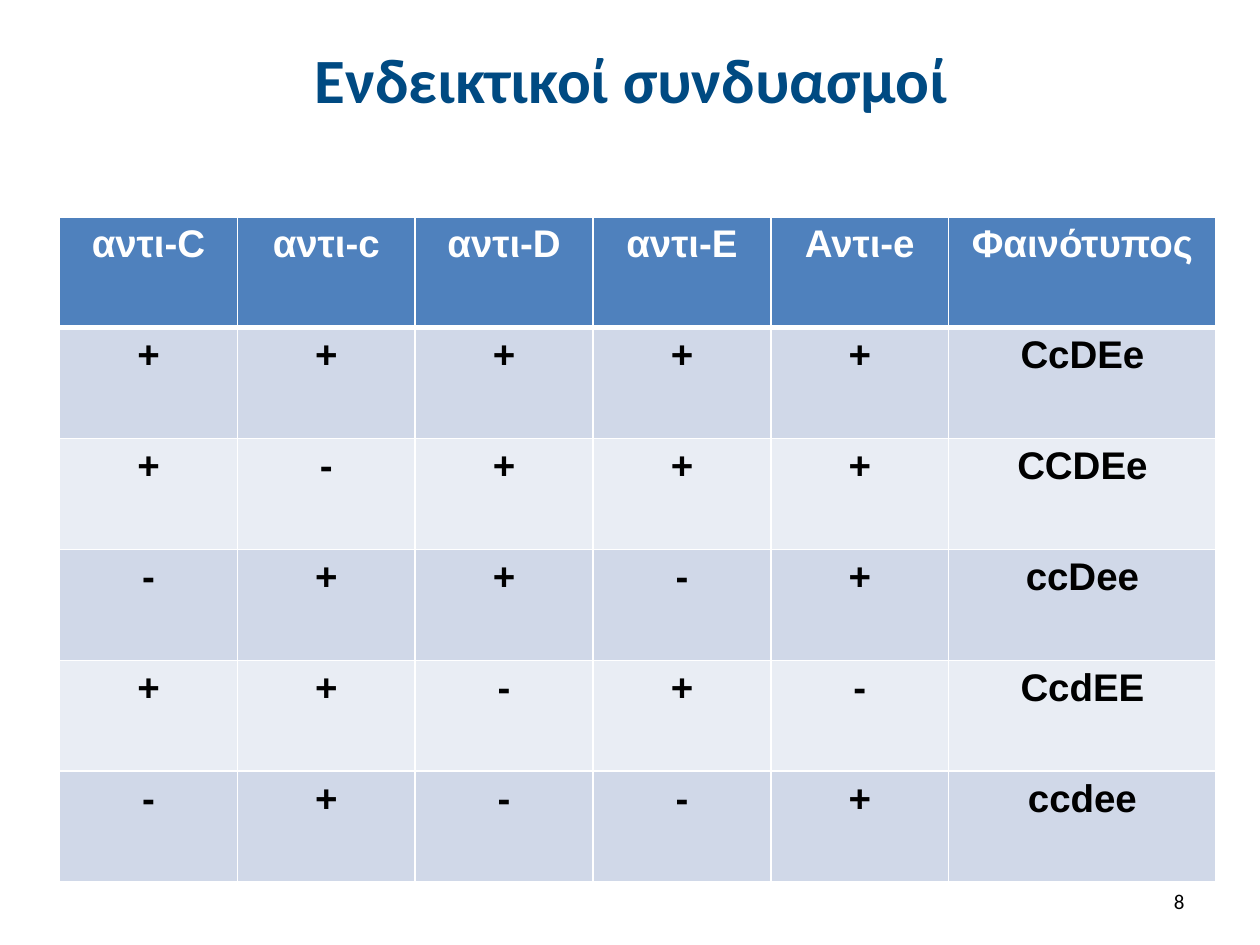
from lxml import etree
from pptx import Presentation
from pptx.dml.color import RGBColor
from pptx.enum import text
from pptx.oxml import ns
from pptx.util import Cm, Pt

HEADERS = ["αντι-C", "αντι-c", "αντι-D", "αντι-E", "Αντι-e", "Φαινότυπος"]
REACTIONS = [
    ("+++++", "CcDEe"),
    ("+-+++", "CCDEe"),
    ("-++-+", "ccDee"),
    ("++-+-", "CcdEE"),
    ("-+--+", "ccdee"),
]
HEADER_FILL = "4F81BD"
BAND_FILLS = ["D0D8E8", "E9EDF4"]


def color(value):
    return RGBColor.from_string(value)


def write(frame, words, size, font, tint, align, bold=False):
    frame.text = words
    paragraph = frame.paragraphs[0]
    paragraph.alignment = align
    for span in paragraph.runs:
        span.font.size = Pt(size)
        span.font.name = font
        span.font.bold = bold
        span.font.color.rgb = color(tint)


def place(box, left, top, width, height):
    box.left, box.top, box.width, box.height = map(Cm, (left, top, width, height))


def add_title(page, words):
    title = page.shapes.title
    place(title, 1.3, 0.33, 22.86, 2.51)
    title.text_frame.vertical_anchor = text.MSO_ANCHOR.MIDDLE
    write(title.text_frame, words, 36, "Calibri", "004A82", text.PP_ALIGN.CENTER, True)


def add_borders(cell, widths):
    properties = cell._tc.get_or_add_tcPr()
    for side, width in widths.items():
        line = etree.SubElement(properties, ns.qn(f"a:ln{side}"), w=str(Pt(width)))
        fill = etree.SubElement(line, ns.qn("a:solidFill"))
        etree.SubElement(fill, ns.qn("a:srgbClr"), val="FFFFFF")


def format_cell(cell, words, row):
    tint = "000000" if row else "FFFFFF"
    fill = BAND_FILLS[(row - 1) % 2] if row else HEADER_FILL
    write(cell.text_frame, words, 22, "Arial", tint, text.PP_ALIGN.CENTER, True)
    add_borders(cell, {"L": 1, "R": 1, "T": 3 if row == 1 else 1, "B": 1 if row else 3})
    cell.fill.solid()
    cell.fill.fore_color.rgb = color(fill)


def add_phenotype_table(page):
    rows = [HEADERS] + [[*signs, phenotype] for signs, phenotype in REACTIONS]
    frame = page.shapes.add_table(
        len(rows), len(HEADERS), Cm(1.2), Cm(4.37), Cm(23.32), Cm(13.41)
    )
    table = frame.table
    for column, width in zip(table.columns, [3.585] * 5 + [5.39]):
        column.width = Cm(width)
    for row, values in enumerate(rows):
        for column, words in enumerate(values):
            format_cell(table.cell(row, column), words, row)


def add_page_number(page, number):
    box = page.shapes.add_textbox(Cm(18.21), Cm(17.65), Cm(5.92), Cm(1.02))
    box.text_frame.word_wrap = True
    box.text_frame.vertical_anchor = text.MSO_ANCHOR.MIDDLE
    write(box.text_frame, number, 12, "Calibri", "000000", text.PP_ALIGN.RIGHT)


def main():
    deck = Presentation()
    deck.slide_width, deck.slide_height = Cm(25.4), Cm(19.05)
    page = deck.slides.add_slide(deck.slide_layouts[5])
    add_title(page, "Ενδεικτικοί συνδυασμοί")
    add_phenotype_table(page)
    add_page_number(page, "8")
    deck.save("out.pptx")


if __name__ == "__main__":
    main()
